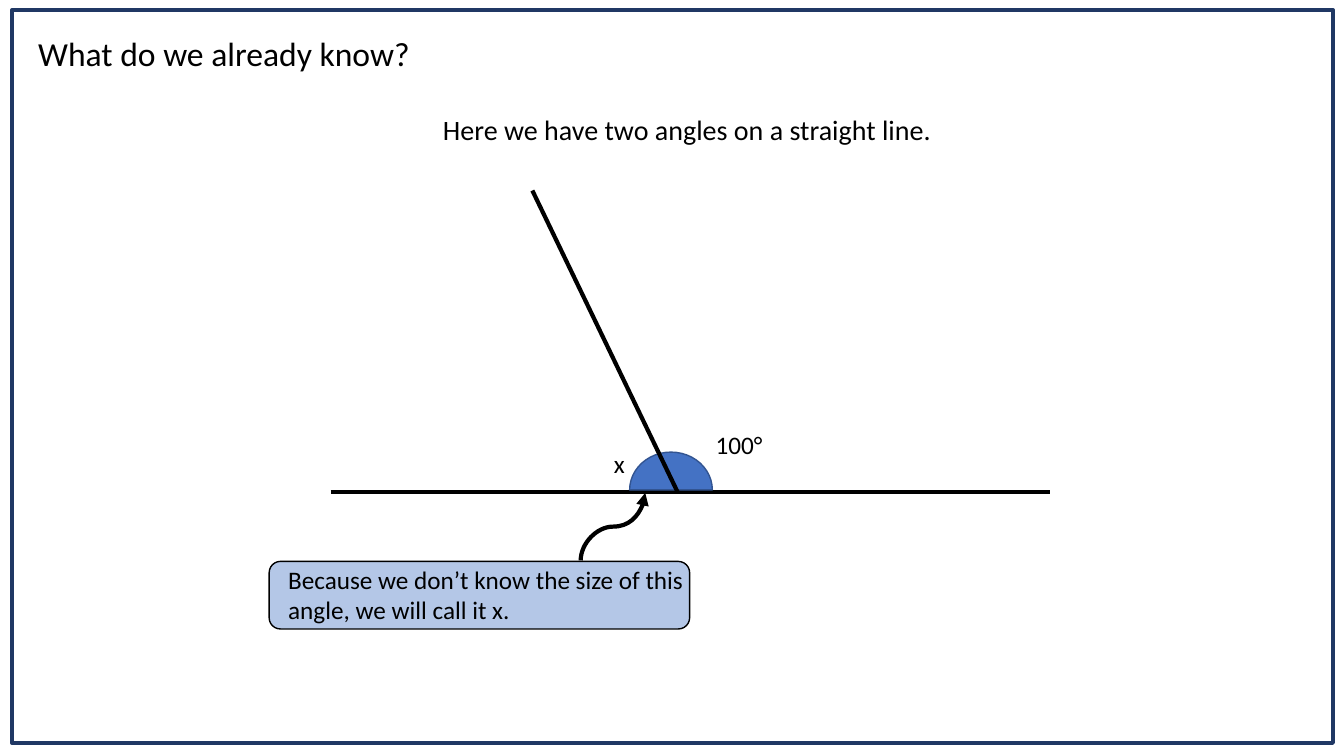
from dataclasses import dataclass

from lxml.etree import SubElement
from pptx import Presentation
from pptx.dml.color import RGBColor
from pptx.enum.shapes import MSO_CONNECTOR, MSO_SHAPE
from pptx.enum.text import MSO_AUTO_SIZE, PP_ALIGN
from pptx.oxml.ns import qn
from pptx.util import Inches, Pt


@dataclass(frozen=True)
class Theme:
    font: str = "Calibri"
    ink: str = "000000"
    frame: str = "203864"
    angle: str = "4472C4"
    angle_edge: str = "325491"
    callout: str = "B4C7E7"
    title_size: int = 24
    statement_size: int = 20
    label_size: int = 18
    thick: int = 3
    thin: int = 1


def write_text(frame, text, size, font, color, align=PP_ALIGN.LEFT, wrap=False):
    frame.word_wrap = wrap
    frame.auto_size = MSO_AUTO_SIZE.SHAPE_TO_FIT_TEXT
    paragraph = frame.paragraphs[0]
    paragraph.alignment = align
    run = paragraph.add_run()
    run.text = text
    run.font.name = font
    run.font.size = Pt(size)
    run.font.color.rgb = RGBColor.from_string(color)


class SlideBuilder:
    def __init__(self, slide, theme):
        self.slide = slide
        self.theme = theme

    def stroke(self, line, color, width):
        line.color.rgb = RGBColor.from_string(color)
        line.width = Pt(width)

    def shape(self, kind, box, edge, width, fill=None, parent=None):
        shapes = (parent or self.slide).shapes
        shape = shapes.add_shape(kind, *map(Inches, box))
        shape.shadow.inherit = False
        if fill:
            shape.fill.solid()
            shape.fill.fore_color.rgb = RGBColor.from_string(fill)
        else:
            shape.fill.background()
        self.stroke(shape.line, edge, width)
        return shape

    def text(self, text, box, size, parent=None, **text_format):
        shapes = (parent or self.slide).shapes
        holder = shapes.add_textbox(*map(Inches, box))
        write_text(holder.text_frame, text, size, self.theme.font,
                   self.theme.ink, **text_format)

    def line(self, start, end, kind=MSO_CONNECTOR.STRAIGHT):
        connector = self.slide.shapes.add_connector(
            kind, *map(Inches, (*start, *end)))
        self.stroke(connector.line, self.theme.ink, self.theme.thick)
        SubElement(connector._element.spPr, qn("a:effectLst"))
        return connector

    def upward_curve(self, start, end):
        """Curved arrow that leaves and arrives vertically."""
        # A quarter turn swaps the half-extents around the shared centre
        center_x, center_y = (start[0] + end[0]) / 2, (start[1] + end[1]) / 2
        half_w, half_h = (start[1] - end[1]) / 2, (end[0] - start[0]) / 2
        arrow = self.line((center_x + half_w, center_y + half_h),
                          (center_x - half_w, center_y - half_h),
                          MSO_CONNECTOR.CURVE)
        properties = arrow._element.spPr
        properties.find(qn("a:xfrm")).set("rot", "5400000")
        SubElement(properties.find(qn("a:ln")), qn("a:tailEnd"), type="triangle")


def main():
    theme = Theme()
    presentation = Presentation()
    presentation.slide_width = Inches(13.33)
    presentation.slide_height = Inches(7.5)
    slide = presentation.slides.add_slide(presentation.slide_layouts[6])
    builder = SlideBuilder(slide, theme)

    # Frame around the slide
    builder.shape(MSO_SHAPE.RECTANGLE, (0.12, 0.1, 13.1, 7.27),
                  theme.frame, theme.thick)

    # Straight line, angle marker and the ray that splits it
    baseline = 4.88
    builder.line((3.28, baseline), (10.41, baseline))
    angle_marker = builder.shape(MSO_SHAPE.PIE, (6.28, 4.45, 0.75, 0.82),
                                 theme.angle_edge, theme.thin, theme.angle)
    angle_marker.adjustments[0] = 54
    angle_marker.adjustments[1] = 162
    angle_marker.rotation = 90
    builder.line((5.28, 1.89), (6.72, baseline))
    builder.text("x", (5.99, 4.4, 0.31, 0.4), theme.label_size)

    # Callout explaining the unknown angle
    callout = slide.shapes.add_group_shape()
    builder.shape(MSO_SHAPE.ROUNDED_RECTANGLE, (2.67, 5.57, 4.17, 0.67),
                  theme.ink, theme.thin, theme.callout, parent=callout)
    builder.text("Because we don’t know the size of this angle, we will call it x.",
                 (2.76, 5.55, 4.24, 0.71), theme.label_size,
                 parent=callout, wrap=True)
    builder.upward_curve((5.76, 5.56), (6.4, 4.89))

    # Known angle, title and statement
    builder.text("100°", (7, 4.21, 0.67, 0.4), theme.label_size)
    builder.text("What do we already know?", (0.28, 0.28, 3.92, 0.5),
                 theme.title_size)
    builder.text("Here we have two angles on a straight line. ",
                 (4.27, 1.07, 5.15, 0.44), theme.statement_size,
                 align=PP_ALIGN.CENTER)

    presentation.save("out.pptx")


if __name__ == "__main__":
    main()
